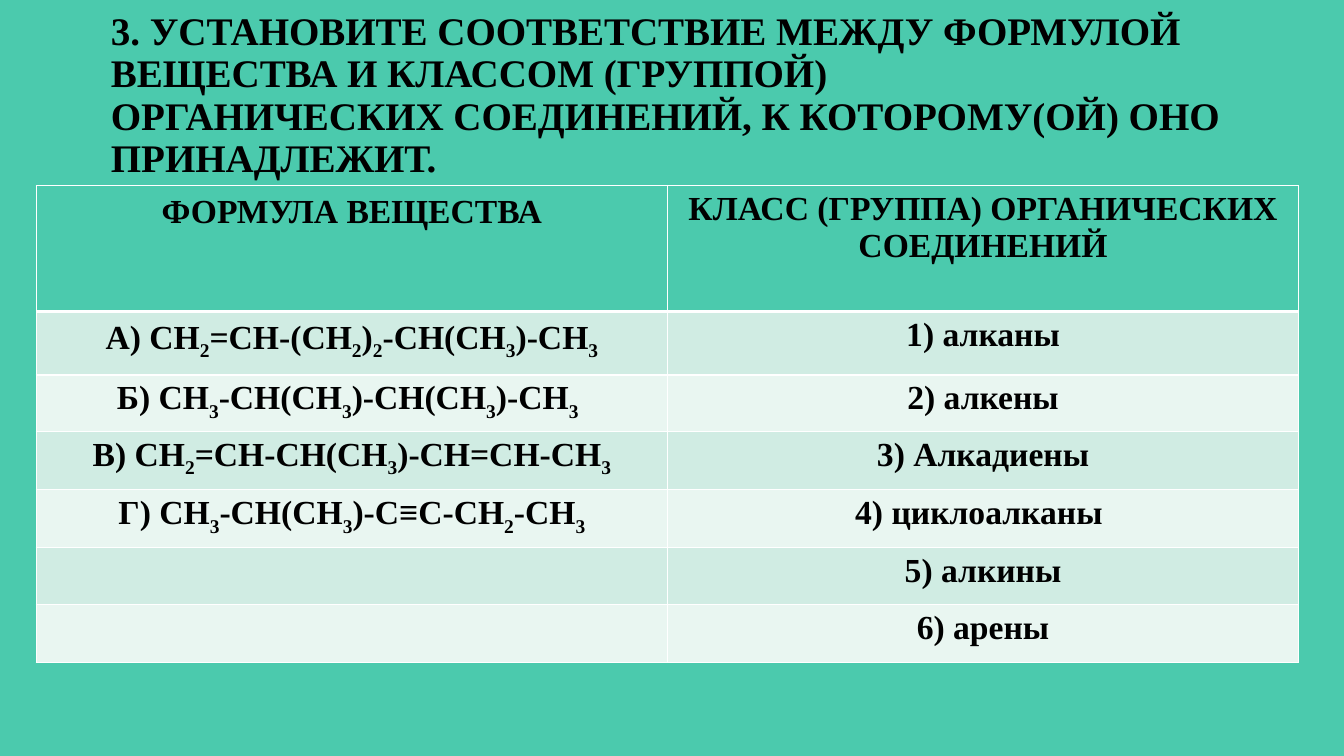
from pptx import Presentation
from pptx.dml.color import RGBColor
from pptx.enum.text import MSO_ANCHOR, MSO_AUTO_SIZE, PP_ALIGN
from pptx.oxml import parse_xml
from pptx.oxml.ns import nsdecls
from pptx.util import Inches, Pt

TEAL, BLACK, WHITE = "4BCAAD", "000000", "FFFFFF"
BANDS = ["D0ECE3", "E9F6F1"]
TITLE = ("3. УСТАНОВИТЕ СООТВЕТСТВИЕ МЕЖДУ ФОРМУЛОЙ ВЕЩЕСТВА И КЛАССОМ (ГРУППОЙ) \v"
         "ОРГАНИЧЕСКИХ СОЕДИНЕНИЙ, К КОТОРОМУ(ОЙ) ОНО ПРИНАДЛЕЖИТ.")
# An underscore makes the next character a subscript.
ROWS = [
    ("ФОРМУЛА ВЕЩЕСТВА", "КЛАСС (ГРУППА) ОРГАНИЧЕСКИХ СОЕДИНЕНИЙ"),
    ("А) СН_2=СН-(СН_2)_2-СН(СН_3)-СН_3", "1) алканы"),
    ("Б) СН_3-СН(СН_3)-СН(СН_3)-СН_3 ", "2) алкены"),
    ("В) СН_2=СН-СН(СН_3)-СН=СН-СН_3", "3) Алкадиены"),
    ("Г) СН_3-СН(СН_3)-С≡С-СН_2-СН_3", "4) циклоалканы "),
    ("", "5) алкины"),
    ("", "6) арены"),
]
ROW_HEIGHTS = [1.25, 0.63, 0.56, 0.58, 0.57, 0.57, 0.57]
COLUMN_WIDTH = 6.26


def rgb(color):
    return RGBColor.from_string(color)


def set_font(paragraph, size):
    font = paragraph.font
    font.name, font.size, font.bold = "Times New Roman", Pt(size), True
    font.color.rgb = rgb(BLACK)


def add_title(slide):
    title = slide.shapes.title
    title.left, title.top = Inches(1), Inches(0.29)
    title.width, title.height = Inches(11.33), Inches(1.75)
    frame = title.text_frame
    frame.word_wrap = True
    frame.auto_size = MSO_AUTO_SIZE.NONE
    frame.vertical_anchor = MSO_ANCHOR.MIDDLE
    frame.margin_bottom = Inches(0.47)
    heading = frame.paragraphs[0]
    heading.text = TITLE
    heading.alignment = PP_ALIGN.LEFT
    heading.line_spacing = 0.9
    set_font(heading, 27.9)


def add_formula(paragraph, formula):
    """Write text whose underscores mark one-character subscripts."""
    plain, *pieces = formula.split("_")
    paragraph.add_run().text = plain
    for piece in pieces:
        subscript = paragraph.add_run()
        subscript.text = piece[0]
        subscript.font._element.set("baseline", "-25000")
        if piece[1:]:
            paragraph.add_run().text = piece[1:]


def set_borders(cell, top, bottom):
    properties = cell._tc.get_or_add_tcPr()
    for side, width in (("L", 1), ("R", 1), ("T", top), ("B", bottom)):
        properties.append(parse_xml(
            f'<a:ln{side} {nsdecls("a")} w="{Pt(width)}"><a:solidFill>'
            f'<a:srgbClr val="{WHITE}"/></a:solidFill></a:ln{side}>'))


def fill_cell(cell, text, row, column):
    set_borders(cell, top=3 if row == 1 else 1, bottom=3 if row == 0 else 1)
    cell.fill.solid()
    cell.fill.fore_color.rgb = rgb(BANDS[(row - 1) % 2] if row else TEAL)
    paragraph = cell.text_frame.paragraphs[0]
    if text:
        add_formula(paragraph, text)
    paragraph.alignment = PP_ALIGN.CENTER
    if column == 0 and row < 2:
        paragraph.line_spacing = 1.07
    set_font(paragraph, 24)


def add_matching_table(slide):
    table = slide.shapes.add_table(
        len(ROWS), 2, Inches(0.36), Inches(1.84),
        Inches(2 * COLUMN_WIDTH), Inches(sum(ROW_HEIGHTS))).table
    for column in table.columns:
        column.width = Inches(COLUMN_WIDTH)
    for row, (texts, height) in enumerate(zip(ROWS, ROW_HEIGHTS)):
        table.rows[row].height = Inches(height)
        for column, text in enumerate(texts):
            fill_cell(table.cell(row, column), text, row, column)


def main():
    presentation = Presentation()
    presentation.slide_width, presentation.slide_height = Inches(13.33), Inches(7.5)
    slide = presentation.slides.add_slide(presentation.slide_layouts[5])
    slide.background.fill.solid()
    slide.background.fill.fore_color.rgb = rgb(TEAL)
    add_title(slide)
    add_matching_table(slide)
    presentation.save("out.pptx")


if __name__ == "__main__":
    main()
